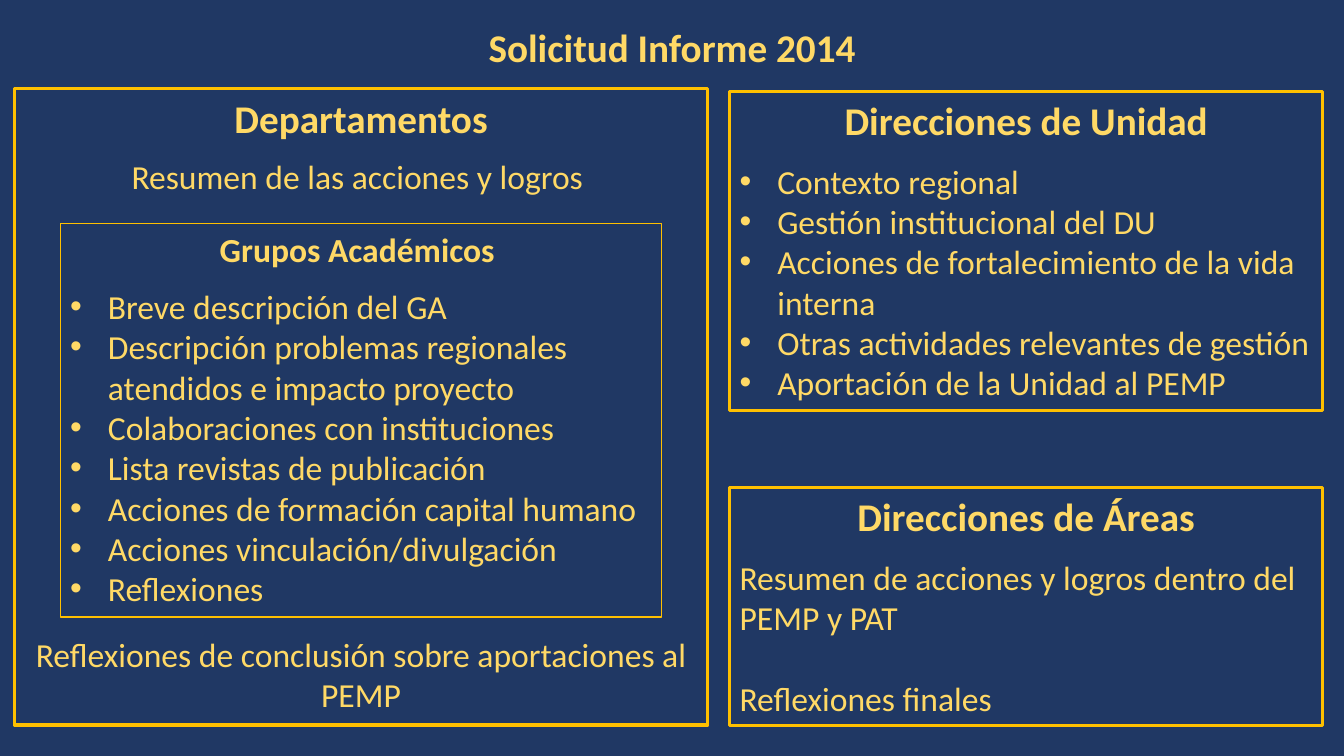
from lxml import etree
from pptx import Presentation
from pptx.dml.color import RGBColor
from pptx.enum.shapes import MSO_SHAPE
from pptx.enum.text import MSO_ANCHOR, PP_ALIGN
from pptx.oxml.ns import qn
from pptx.util import Cm, Pt

NAVY = RGBColor(0x20, 0x38, 0x64)
GOLD = RGBColor(0xFF, 0xC0, 0x00)
CREAM = RGBColor(0xFF, 0xD9, 0x66)
LEFT, CENTER = PP_ALIGN.LEFT, PP_ALIGN.CENTER
TOP, RECT = MSO_ANCHOR.TOP, MSO_SHAPE.RECTANGLE
BULLET_INDENT = Cm(0.95)

TITLE = "Solicitud Informe 2014"
TITLE_BOX = (0, 0.46, 33.87, 1.44)

# Paragraph styles: font, alignment and bullet
STYLES = {
    "head": ({"size": Pt(28), "bold": True}, CENTER, False),
    "subhead": ({"size": Pt(24), "bold": True}, CENTER, False),
    "center": ({"size": Pt(24), "bold": False}, CENTER, False),
    "plain": ({"size": Pt(24), "bold": False}, LEFT, False),
    "bullet": ({"size": Pt(24), "bold": False}, LEFT, True),
}

# Boxes: left, top, width, height in cm; line width in points;
# paragraphs as (style, space before in points, texts)
BOXES = [
    ((0.36, 2.24, 17.48, 16.03), 2.25, [
        ("head", 0, ["Departamentos"]),
        ("center", 11, ["Resumen de las acciones y logros "]),
        ("center", 312, ["Reflexiones de conclusión sobre aportaciones al PEMP"]),
    ]),
    ((1.52, 5.64, 15.16, 9.91), 1, [
        ("subhead", 0, ["Grupos Académicos "]),
        ("bullet", 12, [
            "Breve descripción del GA",
            "Descripción problemas regionales atendidos e impacto proyecto",
            "Colaboraciones con instituciones",
            "Lista revistas de publicación",
            "Acciones de formación capital humano",
            "Acciones vinculación/divulgación",
            "Reflexiones",
        ]),
    ]),
    ((18.39, 2.31, 14.94, 8.03), 2.25, [
        ("head", 0, ["Direcciones de Unidad"]),
        ("bullet", 12, [
            "Contexto regional",
            "Gestión institucional del DU",
            "Acciones de fortalecimiento de la vida interna",
            "Otras actividades relevantes de gestión",
            "Aportación de la Unidad al PEMP",
        ]),
    ]),
    ((18.39, 12.29, 14.94, 5.99), 2.25, [
        ("head", 0, ["Direcciones de Áreas"]),
        ("plain", 12, ["Resumen de acciones y logros dentro del PEMP y PAT"]),
        ("plain", 29, ["Reflexiones finales"]),
    ]),
]


def write(p, text, style, gap):
    font, align, bulleted = STYLES[style]
    p.alignment = align
    p.space_before = Pt(gap)
    if bulleted:
        pPr = p._p.get_or_add_pPr()
        pPr.set("marL", str(BULLET_INDENT))
        pPr.set("indent", str(-BULLET_INDENT))
        etree.SubElement(pPr, qn("a:buFont")).set("typeface", "Arial")
        etree.SubElement(pPr, qn("a:buChar")).set("char", "•")
    r = p.add_run()
    r.text = text
    for name, value in {"name": "Calibri", **font}.items():
        setattr(r.font, name, value)
    r.font.color.rgb = CREAM


def add_box(s, place, line_width, groups):
    box = s.shapes.add_shape(RECT, *map(Cm, place))
    box.shadow.inherit = False
    box.fill.background()
    box.line.color.rgb = GOLD
    box.line.width = Pt(line_width)
    tf = box.text_frame
    tf.word_wrap = True
    tf.vertical_anchor = TOP
    p = tf.paragraphs[0]
    for style, gap, texts in groups:
        for i, text in enumerate(texts):
            if p.runs:
                p = tf.add_paragraph()
            write(p, text, style, 0 if i else gap)


def main():
    prs = Presentation()
    prs.slide_width, prs.slide_height = Cm(33.87), Cm(19.05)
    s = prs.slides.add_slide(prs.slide_layouts[5])
    s.background.fill.solid()
    s.background.fill.fore_color.rgb = NAVY

    title = s.shapes.title
    title.left, title.top, title.width, title.height = map(Cm, TITLE_BOX)
    title.text_frame.vertical_anchor = TOP
    write(title.text_frame.paragraphs[0], TITLE, "head", 0)

    for place, line_width, groups in BOXES:
        add_box(s, place, line_width, groups)
    prs.save("out.pptx")


if __name__ == "__main__":
    main()
